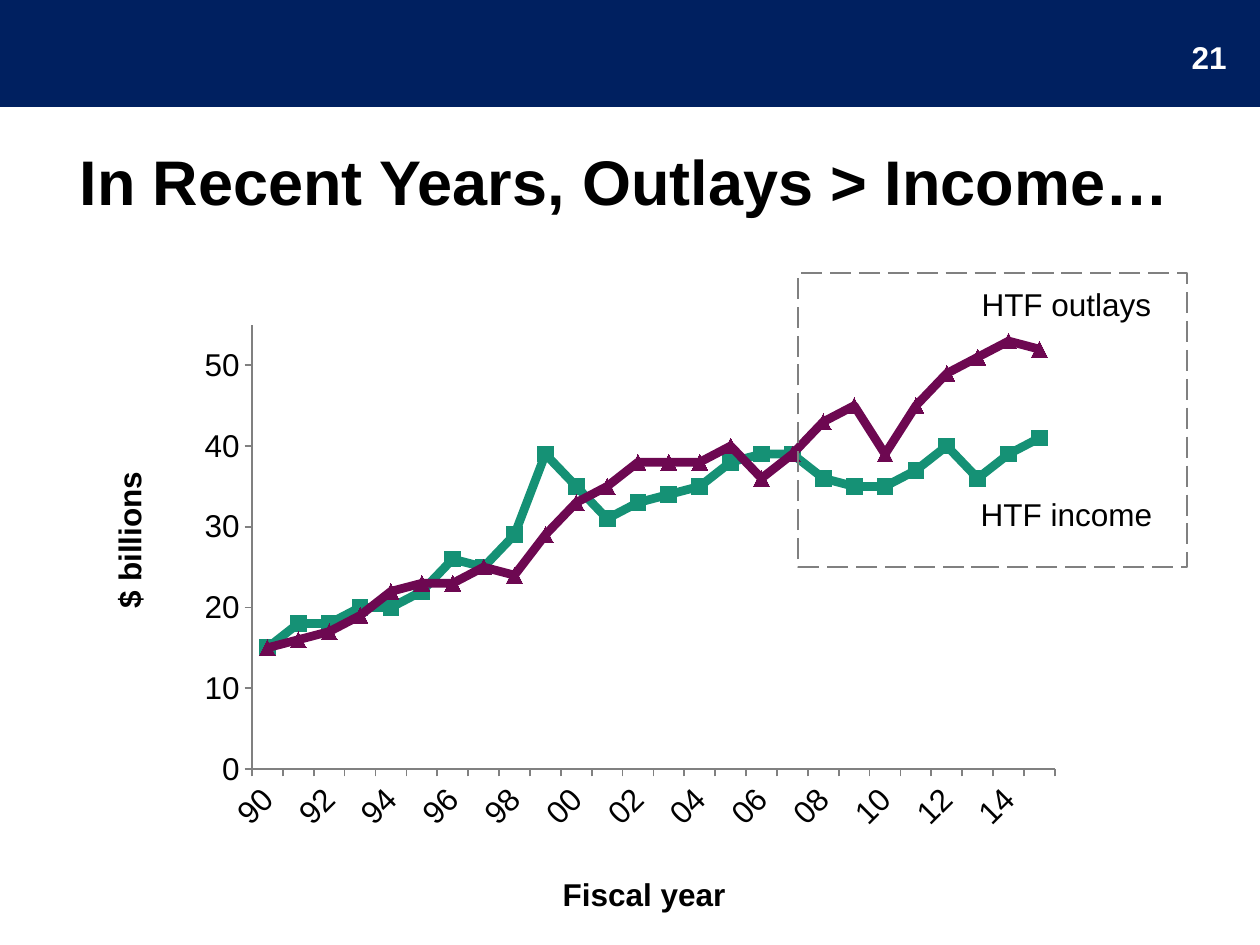
import dataclasses
import typing

import lxml.etree
import pptx
import pptx.chart.data
import pptx.dml.color
import pptx.enum.chart
import pptx.enum.dml
import pptx.enum.shapes
import pptx.enum.text
import pptx.oxml.ns
import pptx.util

SCALE = 914400 / 126  # EMU per px
ALIGN = pptx.enum.text.PP_ALIGN
MARK = pptx.enum.chart.XL_MARKER_STYLE
Pt = pptx.util.Pt


@dataclasses.dataclass(frozen=True)
class Theme:
    face: str = "Arial"
    navy: str = "002060"
    ink: str = "000000"
    paper: str = "FFFFFF"
    gray: str = "808080"
    green: str = "159175"
    plum: str = "6D0851"
    head: int = 36
    body: int = 18


THEME = Theme()


class Box(typing.NamedTuple):
    left: int
    top: int
    width: int
    height: int


class Label(typing.NamedTuple):
    text: str
    box: Box
    size: int = THEME.body
    color: str = THEME.ink
    bold: bool = False
    align: typing.Any = ALIGN.CENTER


class Trend(typing.NamedTuple):
    name: str
    color: str
    mark: typing.Any
    values: list[int]


CHART = Box(63, 287, 1134, 640)

LABELS = [
    Label("In Recent Years, Outlays > Income…", Box(31, 147, 1187, 67), THEME.head, bold=True),
    Label("HTF outlays", Box(967, 279, 199, 50)),
    Label("HTF income", Box(967, 489, 199, 50)),
    Label("21", Box(945, 32, 294, 50), color=THEME.paper, bold=True, align=ALIGN.RIGHT),
]

TRENDS = [
    Trend("HTF income", THEME.green, MARK.SQUARE,
          [15, 18, 18, 20, 20, 22, 26, 25, 29, 39, 35, 31, 33,
           34, 35, 38, 39, 39, 36, 35, 35, 37, 40, 36, 39, 41]),
    Trend("HTF outlays", THEME.plum, MARK.TRIANGLE,
          [15, 16, 17, 19, 22, 23, 23, 25, 24, 29, 33, 35, 38,
           38, 38, 40, 36, 39, 43, 45, 39, 45, 49, 51, 53, 52]),
]


def emu(box: Box) -> list[int]:
    return [round(side * SCALE) for side in box]


def rgb(color: str) -> pptx.dml.color.RGBColor:
    return pptx.dml.color.RGBColor.from_string(color)


def style(font, size: int, color: str, bold: bool) -> None:
    font.name, font.size, font.bold = THEME.face, Pt(size), bold
    font.color.rgb = rgb(color)


def write(slide, label: Label) -> None:
    frame = slide.shapes.add_textbox(*emu(label.box)).text_frame
    frame.word_wrap = True
    frame.vertical_anchor = pptx.enum.text.MSO_ANCHOR.MIDDLE
    para = frame.paragraphs[0]
    para.text, para.alignment = label.text, label.align
    style(para.font, label.size, label.color, label.bold)


def block(slide, box: Box, line: str, width: float, fill: str | None = None):
    shape = slide.shapes.add_shape(pptx.enum.shapes.MSO_SHAPE.RECTANGLE, *emu(box))
    shape.shadow.inherit = False
    if fill:
        shape.fill.solid()
        shape.fill.fore_color.rgb = rgb(fill)
    else:
        shape.fill.background()
    shape.line.color.rgb = rgb(line)
    shape.line.width = Pt(width)
    return shape


def node(tag: str, **attrs: str):
    return lxml.etree.Element(pptx.oxml.ns.qn(tag), attrs)


def place(parent, index: int, inner: bool = False, **sides: int) -> None:
    """Put a manual layout, in px inside the chart, into a chart part."""
    for old in parent.findall(pptx.oxml.ns.qn("c:layout")):
        parent.remove(old)
    layout, manual = node("c:layout"), node("c:manualLayout")
    layout.append(manual)
    if inner:
        manual.append(node("c:layoutTarget", val="inner"))
    manual.extend([node("c:xMode", val="edge"), node("c:yMode", val="edge")])
    for side, size in sides.items():
        whole = CHART.width if side in "xw" else CHART.height
        manual.append(node(f"c:{side}", val=str(size / whole)))
    parent.insert(index, layout)


def dress(axis, title: str, x: int, y: int) -> None:
    axis.has_major_gridlines = False
    axis.major_tick_mark = pptx.enum.chart.XL_TICK_MARK.OUTSIDE
    axis.format.line.color.rgb = rgb(THEME.gray)
    axis.format.line.width = Pt(1)
    style(axis.tick_labels.font, THEME.body, THEME.ink, False)
    para = axis.axis_title.text_frame.paragraphs[0]
    para.text = title
    style(para.font, THEME.body, THEME.ink, True)
    place(axis.axis_title._element, 1, x=x, y=y)


def plot(slide) -> None:
    data = pptx.chart.data.CategoryChartData(number_format="#,##0")
    data.categories = [f"{year % 100:02d}" for year in range(1990, 2016)]
    for trend in TRENDS:
        data.add_series(trend.name, trend.values)
    kind = pptx.enum.chart.XL_CHART_TYPE.LINE_MARKERS
    chart = slide.shapes.add_chart(kind, *emu(CHART), data).chart
    chart.has_legend = chart.has_title = False
    style(chart.font, THEME.body, THEME.ink, False)
    chart.plots[0].vary_by_categories = False

    # Lines and markers
    for series, trend in zip(chart.plots[0].series, TRENDS):
        series.smooth = False
        series.format.line.color.rgb = rgb(trend.color)
        series.format.line.width = Pt(5)
        series.marker.style, series.marker.size = trend.mark, 9
        series.marker.format.fill.solid()
        series.marker.format.fill.fore_color.rgb = rgb(trend.color)
        series.marker.format.line.color.rgb = rgb(trend.color)

    # Axes
    years, money = chart.category_axis, chart.value_axis
    dress(years, "Fiscal year", 494, 581)
    dress(money, "$ billions", 40, 179)
    money.minimum_scale, money.maximum_scale, money.major_unit = 0, 55, 10
    money.tick_labels.number_format = "#,##0"
    money.tick_labels.number_format_is_linked = False
    root = chart._chartSpace
    root.xpath(".//c:valAx/c:title//a:bodyPr")[0].set("rot", "-5400000")
    root.xpath(".//c:catAx/c:txPr/a:bodyPr")[0].set("rot", "-2700000")
    root.xpath(".//c:catAx/c:lblOffset")[0].addnext(node("c:tickLblSkip", val="2"))
    place(root.xpath(".//c:plotArea")[0], 0, inner=True, x=189, y=38, w=803, h=444)


def main() -> None:
    deck = pptx.Presentation()
    deck.slide_width, deck.slide_height = emu(Box(0, 0, 1260, 945))[2:]
    slide = deck.slides.add_slide(deck.slide_layouts[6])

    # Top band, chart, then the frame around recent years
    block(slide, Box(0, 0, 1260, 105), THEME.navy, 2, THEME.navy)
    plot(slide)
    frame = block(slide, Box(798, 273, 389, 294), THEME.gray, 1.5)
    frame.line.dash_style = pptx.enum.dml.MSO_LINE.LONG_DASH

    # Title, line labels and page number
    for label in LABELS:
        write(slide, label)
    deck.save("out.pptx")


if __name__ == "__main__":
    main()
